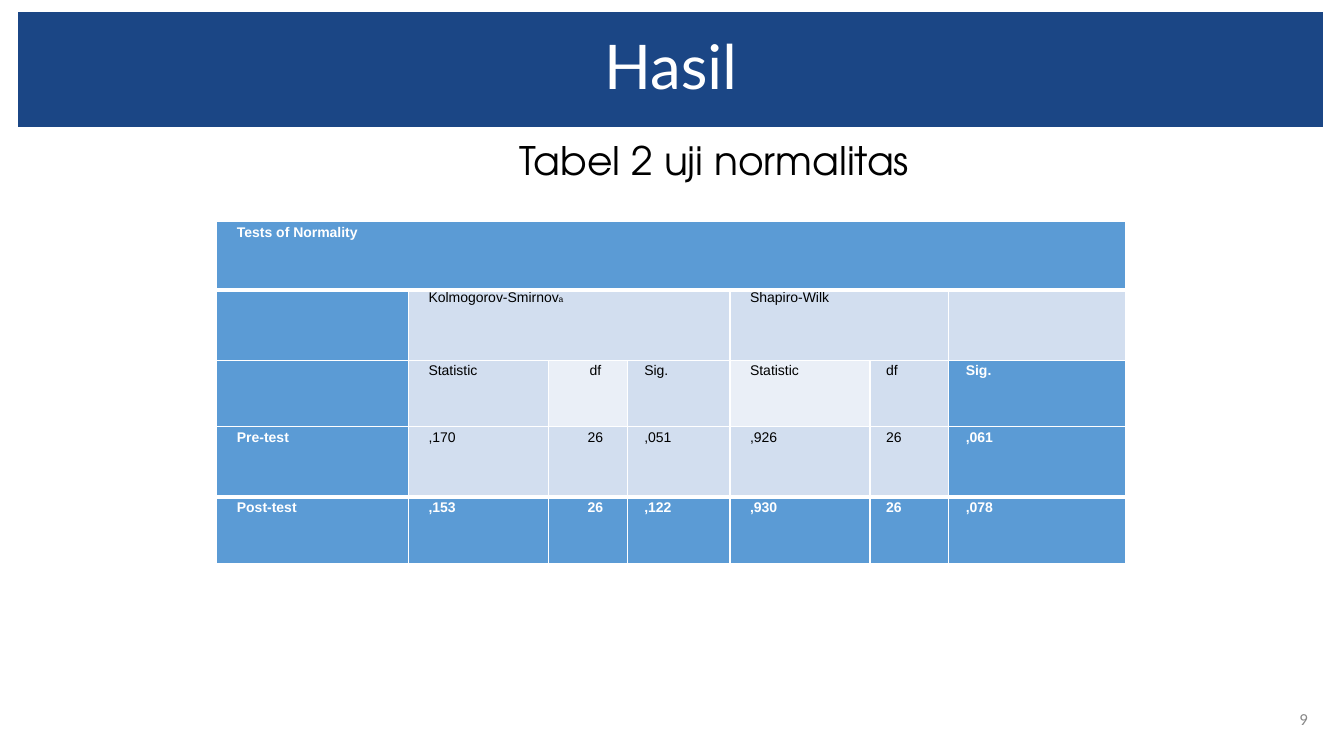
from pptx import Presentation
from pptx.dml.color import RGBColor
from pptx.enum.text import MSO_ANCHOR, MSO_AUTO_SIZE, PP_ALIGN
from pptx.oxml.ns import qn
from pptx.util import Inches, Pt
from lxml import etree

CENTER, RIGHT = PP_ALIGN.CENTER, PP_ALIGN.RIGHT
TOP, MIDDLE = MSO_ANCHOR.TOP, MSO_ANCHOR.MIDDLE
NO_FIT = MSO_AUTO_SIZE.NONE

NAVY, BLUE, PALE, LIGHT = "1B4685", "5B9BD5", "D2DEEF", "EAEFF7"
WHITE, BLACK, GREY = "FFFFFF", "000000", "888888"

WIDTHS = [1.9, 1.39, 0.78, 1.02, 1.39, 0.78, 1.75]
HEIGHTS = [0.68, 0.7, 0.65, 0.7, 0.66]
INDENTS = [0.2, 0.2, 0.15, 0.17, 0.2, 0.16, 0.17]
LEADING = [13.4, None, 12.9, 13.4, 13]
ROWS = [
    ["Tests of Normality", "", "", "", "", "", ""],
    ["", "Kolmogorov-Smirnov", "", "", "Shapiro-Wilk", "", ""],
    ["", "Statistic", "df", "Sig.", "Statistic", "df", "Sig."],
    ["Pre-test", ",170", "26", ",051", ",926", "26", ",061"],
    ["Post-test", ",153", "26", ",122", ",930", "26", ",078"],
]
FILLS = [
    [BLUE] * 7,
    [BLUE] + [PALE] * 6,
    [BLUE, PALE, LIGHT, PALE, LIGHT, PALE, BLUE],
    [BLUE] + [PALE] * 5 + [BLUE],
    [BLUE] * 7,
]
SPANS = [(0, 0, 6), (1, 1, 3), (1, 4, 5)]  # row, first column, last column
THICK = {(0, "B"), (1, "T"), (3, "B"), (4, "T")}  # row, side


def color(text):
    return RGBColor.from_string(text)


def style(para, font, size, ink, bold=False):
    para.font.name = font
    para.font.size = Pt(size)
    para.font.color.rgb = color(ink)
    para.font.bold = bold


def indent(para, left):
    props = para._p.get_or_add_pPr()
    props.set("marL", str(Inches(left)))
    props.set("indent", "0")
    return props


def place(shape, left, top, width, height):
    shape.left, shape.top = Inches(left), Inches(top)
    shape.width, shape.height = Inches(width), Inches(height)


def write(shape, text, anchor):
    frame = shape.text_frame
    frame.text = text
    frame.word_wrap = True
    frame.auto_size = NO_FIT
    frame.vertical_anchor = anchor
    return frame.paragraphs[0]


def add_title(slide):
    title = slide.shapes.title
    place(title, 0.18, 0.12, 12.94, 1.14)
    title.fill.solid()
    title.fill.fore_color.rgb = color(NAVY)
    para = write(title, "Hasil", MIDDLE)
    para.alignment = CENTER
    para.line_spacing = 0.9
    style(para, "Lato", 44, WHITE)


def add_body(slide):
    body = slide.placeholders[1]
    place(body, 0.18, 1.35, 12.94, 5.57)
    para = write(body, "Tabel 2 uji normalitas", TOP)
    etree.SubElement(indent(para, 4.87), qn("a:buNone"))
    para.line_spacing = 0.9
    para.space_before = Pt(0)
    style(para, "TeX Gyre Adventor", 28, BLACK)


def add_number(slide):
    box = slide.shapes.add_textbox(
        Inches(12.5), Inches(6.93), Inches(0.57), Inches(0.4))
    para = write(box, "9", MIDDLE)
    para.alignment = RIGHT
    style(para, "Calibri", 12, GREY)


def add_edges(cell, row):
    props = cell._tc.get_or_add_tcPr()
    for spot, side in enumerate("LRTB"):
        edge = etree.Element(qn("a:ln" + side))
        edge.set("w", str(Pt(3 if (row, side) in THICK else 1)))
        fill = etree.SubElement(edge, qn("a:solidFill"))
        etree.SubElement(fill, qn("a:srgbClr")).set("val", WHITE)
        props.insert(spot, edge)


def fill_cell(cell, row, col):
    tone = FILLS[row][col]
    cell.fill.solid()
    cell.fill.fore_color.rgb = color(tone)
    cell.margin_left = cell.margin_right = 0
    cell.margin_top = cell.margin_bottom = 0
    add_edges(cell, row)
    para = cell.text_frame.paragraphs[0]
    if ROWS[row][col]:
        para.text = ROWS[row][col]
    indent(para, INDENTS[col])
    if col == 2:
        para.alignment = CENTER
    if LEADING[row]:
        para.line_spacing = Pt(LEADING[row])
    head = tone == BLUE
    style(para, "Arial", 10, WHITE if head else BLACK, head)


def add_grid(slide):
    frame = slide.shapes.add_table(
        len(HEIGHTS), len(WIDTHS), Inches(2.15), Inches(2.2),
        Inches(sum(WIDTHS)), Inches(sum(HEIGHTS)))
    table = frame.table
    table.first_row = table.horz_banding = False
    for col, width in enumerate(WIDTHS):
        table.columns[col].width = Inches(width)
    for row, height in enumerate(HEIGHTS):
        table.rows[row].height = Inches(height)
        for col in range(len(WIDTHS)):
            fill_cell(table.cell(row, col), row, col)
    for row, first, last in SPANS:
        table.cell(row, first).merge(table.cell(row, last))
    # Footnote mark after the first test name
    mark = table.cell(1, 1).text_frame.paragraphs[0].add_run()
    mark.text = "a"
    mark.font.size = Pt(6)


def main():
    deck = Presentation()
    deck.slide_width, deck.slide_height = Inches(13.33), Inches(7.5)
    slide = deck.slides.add_slide(deck.slide_layouts[1])
    add_title(slide)
    add_body(slide)
    add_grid(slide)
    add_number(slide)
    deck.save("out.pptx")


if __name__ == "__main__":
    main()
